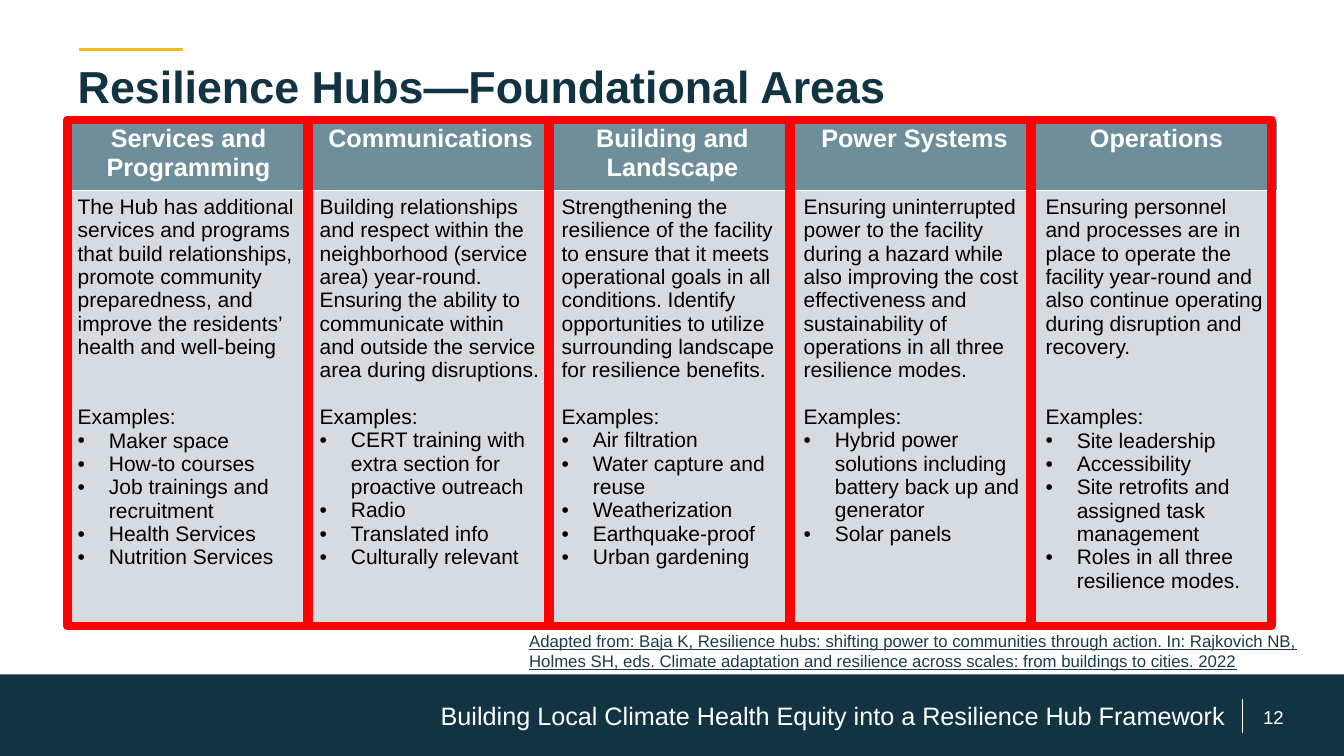
from dataclasses import dataclass

from lxml.etree import SubElement
from pptx import Presentation
from pptx.dml.color import RGBColor
from pptx.enum.shapes import MSO_CONNECTOR, MSO_SHAPE
from pptx.enum.text import MSO_ANCHOR, MSO_AUTO_SIZE, PP_ALIGN
from pptx.oxml.ns import qn
from pptx.util import Inches, Pt


@dataclass(frozen=True)
class Theme:
    font: str = "Arial"
    navy: str = "123342"
    citation: str = "1B3B4D"
    gold: str = "F4BA18"
    slate: str = "6F8E9C"
    mist: str = "D5DBDE"
    red: str = "FF0000"
    white: str = "FFFFFF"
    black: str = "000000"
    title_size: float = 32
    heading_size: float = 18
    body_size: float = 15
    body_line: float = 16.7
    number_size: float = 13.3
    citation_size: float = 12


@dataclass(frozen=True)
class Area:
    heading: str
    summary: str
    gap_lines: int
    examples: tuple


THEME = Theme()
AREAS = (
    Area(
        "Services and Programming",
        "The Hub has additional services and programs that build relationships, "
        "promote community preparedness, and improve the residents’ health and well-being",
        2,
        ("Maker space", "How-to courses", "Job trainings and recruitment",
         "Health Services", "Nutrition Services"),
    ),
    Area(
        "Communications",
        "Building relationships and respect within the neighborhood (service area) "
        "year-round. Ensuring the ability to communicate within and outside the "
        "service area during disruptions.",
        1,
        ("CERT training with extra section for proactive outreach", "Radio",
         "Translated info", "Culturally relevant"),
    ),
    Area(
        "Building and Landscape",
        "Strengthening the resilience of the facility to ensure that it meets "
        "operational goals in all conditions. Identify opportunities to utilize "
        "surrounding landscape for resilience benefits.",
        1,
        ("Air filtration", "Water capture and reuse", "Weatherization",
         "Earthquake-proof", "Urban gardening"),
    ),
    Area(
        "Power Systems",
        "Ensuring uninterrupted power to the facility during a hazard while also "
        "improving the cost effectiveness and sustainability of operations in all "
        "three resilience modes.",
        1,
        ("Hybrid power solutions including battery back up and generator",
         "Solar panels"),
    ),
    Area(
        "Operations",
        "Ensuring personnel and processes are in place to operate the facility "
        "year-round and also continue operating during disruption and recovery.",
        2,
        ("Site leadership", "Accessibility",
         "Site retrofits and assigned task management",
         "Roles in all three resilience modes."),
    ),
)
CITATION = (
    "Adapted from: Baja K, Resilience hubs: shifting power to communities through "
    "action. In: Rajkovich NB, Holmes SH, eds. Climate adaptation and resilience "
    "across scales: from buildings to cities. 2022"
)


def rgb(color):
    return RGBColor.from_string(color)


def write(paragraph, text, size, color, bold=False, align=PP_ALIGN.LEFT):
    paragraph.text = text
    paragraph.alignment = align
    font = paragraph.font
    font.name, font.size, font.bold = THEME.font, Pt(size), bold
    font.color.rgb = rgb(color)


def add_bullet(paragraph):
    properties = paragraph._p.get_or_add_pPr()
    properties.set("marL", str(Inches(0.31)))
    properties.set("indent", str(Inches(-0.31)))
    SubElement(properties, qn("a:buFont"), typeface=THEME.font)
    SubElement(properties, qn("a:buChar"), char="•")


def add_title(slide, text):
    title = slide.shapes.title
    title.left, title.top = Inches(0.67), Inches(0.53)
    title.width, title.height = Inches(12), Inches(0.97)
    frame = title.text_frame
    frame.auto_size = MSO_AUTO_SIZE.NONE
    frame.vertical_anchor = MSO_ANCHOR.TOP
    write(frame.paragraphs[0], text, THEME.title_size, THEME.navy, bold=True)


def add_label(slide, box, text, size, color, align=PP_ALIGN.LEFT,
              anchor=MSO_ANCHOR.TOP):
    frame = slide.shapes.add_textbox(*map(Inches, box)).text_frame
    frame.word_wrap = True
    frame.vertical_anchor = anchor
    write(frame.paragraphs[0], text, size, color, align=align)
    return frame.paragraphs[0]


def add_rule(slide, ends, color, width):
    rule = slide.shapes.add_connector(MSO_CONNECTOR.STRAIGHT, *map(Inches, ends))
    rule.line.color.rgb = rgb(color)
    rule.line.width = Pt(width)
    SubElement(rule._element.spPr, qn("a:effectLst"))


def add_band(slide, box, color):
    band = slide.shapes.add_shape(MSO_SHAPE.RECTANGLE, *map(Inches, box))
    band.shadow.inherit = False
    band.fill.solid()
    band.fill.fore_color.rgb = rgb(color)
    band.line.fill.background()


def add_frame(slide, box):
    frame = slide.shapes.add_shape(MSO_SHAPE.RECTANGLE, *map(Inches, box))
    frame.shadow.inherit = False
    frame.fill.background()
    frame.line.color.rgb = rgb(THEME.red)
    frame.line.width = Pt(6)


def fill_cell(cell, color):
    cell.fill.solid()
    cell.fill.fore_color.rgb = rgb(color)


def write_details(frame, area):
    write(frame.paragraphs[0], area.summary, THEME.body_size, THEME.black)
    lead = frame.add_paragraph()
    lead.space_before = Pt(THEME.body_line * area.gap_lines)
    write(lead, "Examples:", THEME.body_size, THEME.black)
    for example in area.examples:
        item = frame.add_paragraph()
        add_bullet(item)
        write(item, example, THEME.body_size, THEME.black)


def add_areas_table(slide):
    table = slide.shapes.add_table(
        2, len(AREAS), Inches(0.67), Inches(1.19), Inches(12), Inches(5.01)
    ).table
    table.horz_banding = False
    table.rows[0].height, table.rows[1].height = Inches(0.7), Inches(4.31)
    for column, area in enumerate(AREAS):
        heading, details = table.cell(0, column), table.cell(1, column)
        fill_cell(heading, THEME.slate)
        fill_cell(details, THEME.mist)
        write(heading.text_frame.paragraphs[0], area.heading, THEME.heading_size,
              THEME.white, bold=True, align=PP_ALIGN.CENTER)
        write_details(details.text_frame, area)


def add_footer(slide):
    add_band(slide, (0, 6.69, 13.33, 0.81), THEME.navy)
    add_label(slide, (12.24, 6.97, 0.78, 0.28), "12", THEME.number_size,
              THEME.white, PP_ALIGN.CENTER, MSO_ANCHOR.MIDDLE)
    add_rule(slide, (12.32, 6.93, 12.32, 7.27), THEME.white, 0.75)
    add_label(slide, (4, 6.93, 8.25, 0.33),
              "Building Local Climate Health Equity into a Resilience Hub Framework",
              THEME.heading_size, THEME.white, PP_ALIGN.RIGHT, MSO_ANCHOR.MIDDLE)


def main():
    deck = Presentation()
    deck.slide_width, deck.slide_height = Inches(13.33), Inches(7.5)
    slide = deck.slides.add_slide(deck.slide_layouts[5])
    add_rule(slide, (0.78, 0.49, 1.82, 0.49), THEME.gold, 2.5)
    add_title(slide, "Resilience Hubs—Foundational Areas")
    add_footer(slide)
    add_areas_table(slide)
    citation = add_label(slide, (5.15, 6.21, 7.86, 0.5), CITATION,
                         THEME.citation_size, THEME.citation)
    citation.font.underline = True
    for column in range(len(AREAS)):
        add_frame(slide, (0.67 + 2.39 * column, 1.19, 2.38, 5.02))
    deck.save("out.pptx")


if __name__ == "__main__":
    main()
